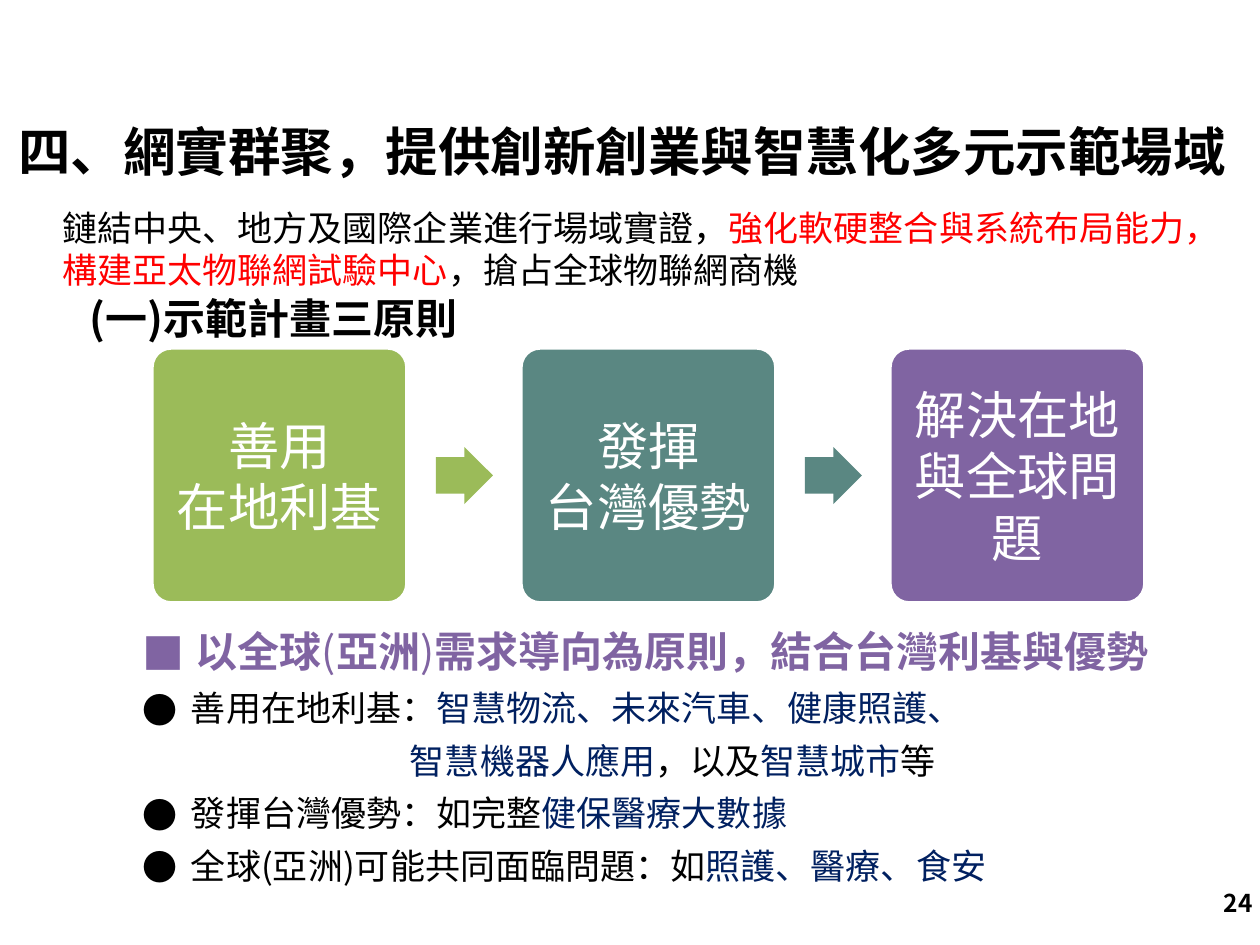
import pptx
import pptx.util
import pptx.dml.color
import pptx.enum.shapes
import pptx.enum.text
import pptx.oxml.ns
from lxml import etree

RGBColor = pptx.dml.color.RGBColor
SHAPE = pptx.enum.shapes.MSO_SHAPE
ALIGN = pptx.enum.text.PP_ALIGN
ANCHOR = pptx.enum.text.MSO_ANCHOR
qn = pptx.oxml.ns.qn

BLACK = RGBColor(0, 0, 0)
WHITE = RGBColor(255, 255, 255)
RED = RGBColor(255, 0, 0)
NAVY = RGBColor(0x00, 0x20, 0x60)
GREEN = RGBColor(0x9B, 0xBB, 0x59)
TEAL = RGBColor(0x5A, 0x87, 0x82)
PURPLE = RGBColor(0x80, 0x64, 0xA2)

FONT = "Noto Sans CJK SC"
EMU_PER_PX = 914400 // 126

TITLE = "四、網實群聚，提供創新創業與智慧化多元示範場域"
INTRO = [
    ("鏈結中央、地方及國際企業進行場域實證，", BLACK, False),
    ("強化軟硬整合與系統布局能力，構建亞太物聯網試驗中心", RED, False),
    ("，搶占全球物聯網商機", BLACK, False),
]
HEADING = "(一)示範計畫三原則"
PAGE = "24"
PRINCIPLES = [
    (["善用", "在地利基"], GREEN),
    (["發揮", "台灣優勢"], TEAL),
    (["解決在地與全球問題"], PURPLE),
]
DETAILS = [
    ("■", 53, -53, 24, [
        ("以全球", PURPLE, True), ("(", PURPLE, False), ("亞洲", PURPLE, True),
        (")", PURPLE, False), ("需求導向為原則，結合台灣利基與優勢", PURPLE, True)]),
    ("●", 48, -48, 20, [
        ("善用在地利基：", BLACK, False),
        ("智慧物流、未來汽車、健康照護、", NAVY, False)]),
    (None, 267, 0, 20, [
        ("智慧機器人應用", NAVY, False), ("，以及", BLACK, False),
        ("智慧城市", NAVY, False), ("等", BLACK, False)]),
    ("●", 48, -48, 20, [
        ("發揮台灣優勢：如完整", BLACK, False), ("健保醫療大數據", NAVY, False)]),
    ("●", 48, -48, 20, [
        ("全球(亞洲)可能共同面臨問題：如", BLACK, False),
        ("照護、醫療、食安", NAVY, False)]),
]

CARD_LEFT, CARD_TOP, CARD_SIZE, CARD_STEP = 152, 348, 255, 369
ARROW_SIZE, ARROW_GAP = 57, 29


def px(n):
    return pptx.util.Emu(round(n * EMU_PER_PX))


def add_runs(p, runs, size):
    for text, color, bold in runs:
        r = p.add_run()
        r.text = text
        r.font.size = pptx.util.Pt(size)
        r.font.bold = bold
        r.font.color.rgb = color
        r.font.name = FONT
        ea = etree.SubElement(r.font._element, qn("a:ea"))
        ea.set("typeface", FONT)


def add_text(slide, box, runs, size, anchor=ANCHOR.TOP):
    tf = slide.shapes.add_textbox(*map(px, box)).text_frame
    tf.word_wrap = True
    tf.vertical_anchor = anchor
    add_runs(tf.paragraphs[0], runs, size)
    return tf


def set_margins(tf, n):
    tf.margin_left = tf.margin_right = tf.margin_top = tf.margin_bottom = px(n)


def set_indent(p, char, left, hanging, color):
    pPr = p._p.get_or_add_pPr()
    pPr.set("marL", str(px(left)))
    pPr.set("indent", str(px(hanging)))
    if char:
        clr = etree.SubElement(pPr, qn("a:buClr"))
        etree.SubElement(clr, qn("a:srgbClr")).set("val", str(color))
        etree.SubElement(pPr, qn("a:buFont")).set("typeface", FONT)
        etree.SubElement(pPr, qn("a:buChar")).set("char", char)


def add_block(slide, kind, box, color):
    s = slide.shapes.add_shape(kind, *map(px, box))
    s.shadow.inherit = False
    s.fill.solid()
    s.fill.fore_color.rgb = color
    s.line.fill.background()
    return s


def add_card(slide, left, lines, color):
    s = add_block(slide, SHAPE.ROUNDED_RECTANGLE,
                  (left, CARD_TOP, CARD_SIZE, CARD_SIZE), color)
    s.adjustments[0] = 0.075
    s.line.color.rgb = WHITE
    s.line.width = pptx.util.Pt(2)
    tf = s.text_frame
    tf.word_wrap = True
    tf.vertical_anchor = ANCHOR.MIDDLE
    set_margins(tf, 0)
    for i, line in enumerate(lines):
        p = tf.add_paragraph() if i else tf.paragraphs[0]
        p.alignment = ALIGN.CENTER
        add_runs(p, [(line, WHITE, False)], 29.3)


def add_details(slide):
    tf = slide.shapes.add_textbox(px(137), px(620), px(1033), px(276)).text_frame
    tf.word_wrap = True
    set_margins(tf, 6)
    for i, (char, left, hanging, size, runs) in enumerate(DETAILS):
        p = tf.add_paragraph() if i else tf.paragraphs[0]
        set_indent(p, char, left, hanging, runs[0][1])
        if i:
            p.space_before = pptx.util.Pt(6)
        add_runs(p, runs, size)


def main():
    prs = pptx.Presentation()
    prs.slide_width, prs.slide_height = px(1260), px(945)
    slide = prs.slides.add_slide(prs.slide_layouts[6])

    for i, (lines, color) in enumerate(PRINCIPLES):
        left = CARD_LEFT + i * CARD_STEP
        add_card(slide, left, lines, color)
        if i < len(PRINCIPLES) - 1:
            arrow = add_block(slide, SHAPE.RIGHT_ARROW, (
                left + CARD_SIZE + ARROW_GAP,
                CARD_TOP + (CARD_SIZE - ARROW_SIZE) / 2,
                ARROW_SIZE, ARROW_SIZE), color)
            arrow.adjustments[0] = 0.64

    add_details(slide)
    title = add_text(slide, (6, 60, 1254, 183), [(TITLE, BLACK, True)], 30, ANCHOR.MIDDLE)
    title.paragraphs[0].line_spacing = pptx.util.Pt(35)
    add_text(slide, (77, 286, 425, 63), [(HEADING, BLACK, True)], 24)
    add_text(slide, (50, 200, 1181, 97), INTRO, 20)
    page = add_text(slide, (971, 878, 294, 50), [(PAGE, BLACK, True)], 14, ANCHOR.MIDDLE)
    page.paragraphs[0].alignment = ALIGN.RIGHT

    prs.save("out.pptx")


if __name__ == "__main__":
    main()
